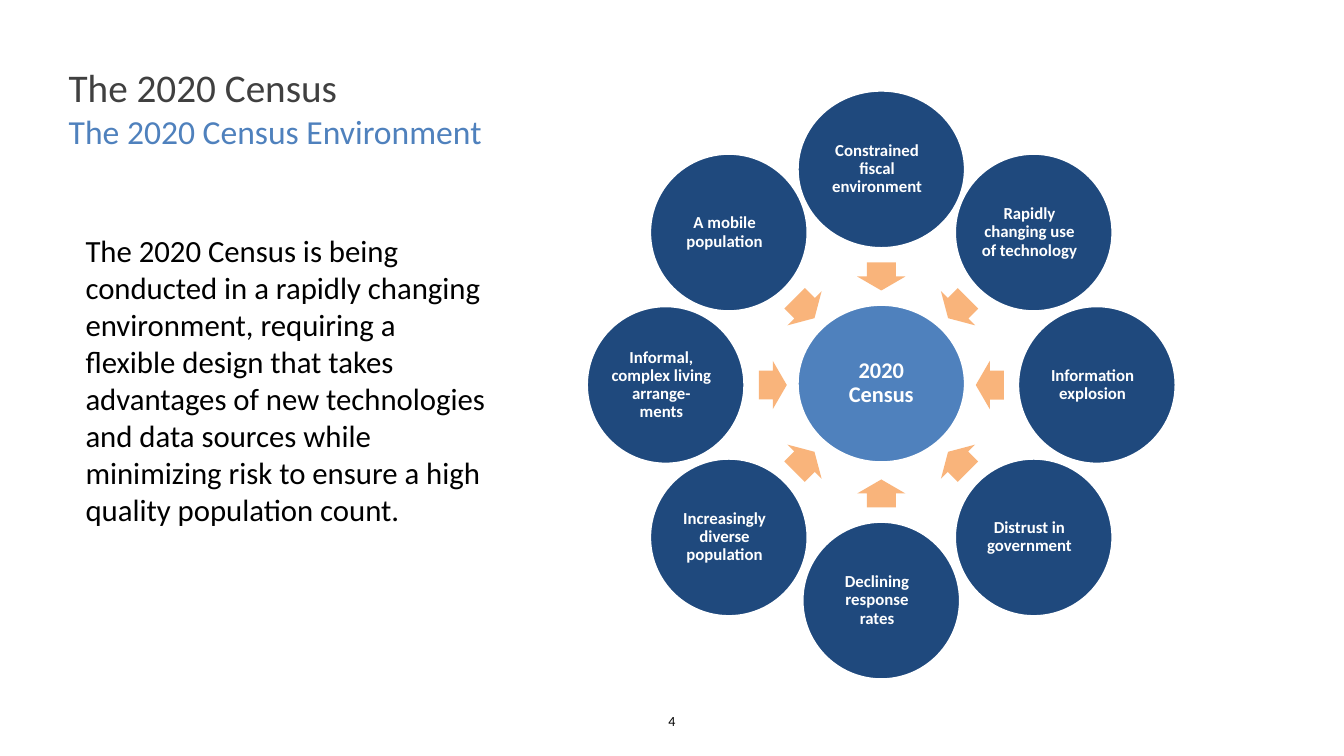
from dataclasses import dataclass
from math import cos, radians, sin

from pptx import Presentation
from pptx.dml.color import RGBColor
from pptx.enum.shapes import MSO_SHAPE
from pptx.enum.text import MSO_ANCHOR, PP_ALIGN
from pptx.util import Pt


@dataclass(frozen=True)
class Theme:
    """Colours, font and type sizes of the slide."""
    font: str = "Calibri"
    white: str = "FFFFFF"
    black: str = "000000"
    grey: str = "404040"
    blue: str = "4F81BD"
    navy: str = "1F497D"
    orange: str = "F9B47B"
    title: int = 28
    subtitle: int = 24
    body: int = 22
    hub: int = 16
    factor: int = 12
    number: int = 10


THEME = Theme()

FACTORS = [
    "Constrained fiscal environment",
    "Rapidly changing use of technology",
    "Information explosion",
    "Distrust in government",
    "Declining response rates",
    "Increasingly diverse population",
    "Informal, complex living arrange-ments",
    "A mobile population",
]


def add_run(p, text, size, color, bold=False):
    """Append one styled run to a paragraph."""
    r = p.add_run()
    r.text = text
    r.font.name = THEME.font
    r.font.size = Pt(size)
    r.font.bold = bold
    r.font.color.rgb = RGBColor.from_string(color)


def add_text(s, box, lines, align=PP_ALIGN.LEFT):
    """Place a text box with one paragraph per (text, size, colour) line."""
    tf = s.shapes.add_textbox(*map(Pt, box)).text_frame
    tf.word_wrap = True
    for i, line in enumerate(lines):
        p = tf.add_paragraph() if i else tf.paragraphs[0]
        p.alignment = align
        add_run(p, *line)


def add_centred(s, kind, cx, cy, w, h, fill):
    """Place a filled shape around a centre point."""
    sp = s.shapes.add_shape(kind, Pt(cx - w / 2), Pt(cy - h / 2), Pt(w), Pt(h))
    sp.shadow.inherit = False
    sp.fill.solid()
    sp.fill.fore_color.rgb = RGBColor.from_string(fill)
    sp.line.fill.background()
    return sp


def add_disc(s, cx, cy, w, h, fill, text, size, left, right):
    """Place a labelled, white-edged ellipse."""
    sp = add_centred(s, MSO_SHAPE.OVAL, cx, cy, w, h, fill)
    sp.line.color.rgb = RGBColor.from_string(THEME.white)
    sp.line.width = Pt(2)
    tf = sp.text_frame
    tf.word_wrap = True
    tf.vertical_anchor = MSO_ANCHOR.MIDDLE
    tf.margin_left, tf.margin_right = Pt(left), Pt(right)
    tf.margin_top = tf.margin_bottom = Pt(1.5)
    p = tf.paragraphs[0]
    p.alignment = PP_ALIGN.CENTER
    p.line_spacing = 0.9
    add_run(p, text, size, THEME.white, True)


def add_ring(s, box):
    """Draw the hub, with factors and inward arrows spaced evenly around it."""
    x, y, w, h = box
    cx, cy, disc, wide = x + w / 2, y + h / 2, 113, 120
    ring, arrow_ring = (h - disc) / 2, 77.5
    add_disc(s, cx, cy - 1, wide, disc, THEME.blue, "2020 Census", THEME.hub, 1.5, 1.5)
    for i, factor in enumerate(FACTORS):
        angle = i * 360 / len(FACTORS)
        dx, dy = sin(radians(angle)), -cos(radians(angle))
        arrow = add_centred(s, MSO_SHAPE.RIGHT_ARROW, cx + arrow_ring * dx,
                            cy + arrow_ring * dy, 20, 34.5, THEME.orange)
        arrow.adjustments[0] = 0.6
        arrow.adjustments[1] = 0.5
        arrow.rotation = (angle + 90) % 360
        add_disc(s, cx + ring * dx, cy + ring * dy, disc if i else wide, disc,
                 THEME.navy, factor, THEME.factor, 1, 7)


def add_title(s, box):
    """Write the title and subtitle."""
    add_text(s, box, [
        ("The 2020 Census", THEME.title, THEME.grey),
        ("The 2020 Census Environment", THEME.subtitle, THEME.blue),
    ])


def add_body(s, box):
    """Write the statement on the left."""
    add_text(s, box, [(
        "The 2020 Census is being conducted in a rapidly changing environment, "
        "requiring a flexible design that takes advantages of new technologies "
        "and data sources while minimizing risk to ensure a high quality "
        "population count.", THEME.body, THEME.black)])


def add_number(s, box):
    """Write the slide number."""
    add_text(s, box, [("4", THEME.number, THEME.black)], PP_ALIGN.CENTER)


def main():
    """Build and save the slide."""
    prs = Presentation()
    prs.slide_width, prs.slide_height = Pt(960), Pt(540)
    s = prs.slides.add_slide(prs.slide_layouts[6])
    add_body(s, (54, 162, 300, 250.5))
    add_ring(s, (419, 64.5, 421, 421))
    add_number(s, (396, 505.5, 168, 29))
    add_title(s, (42, 42, 756, 70))
    prs.save("out.pptx")


if __name__ == "__main__":
    main()
